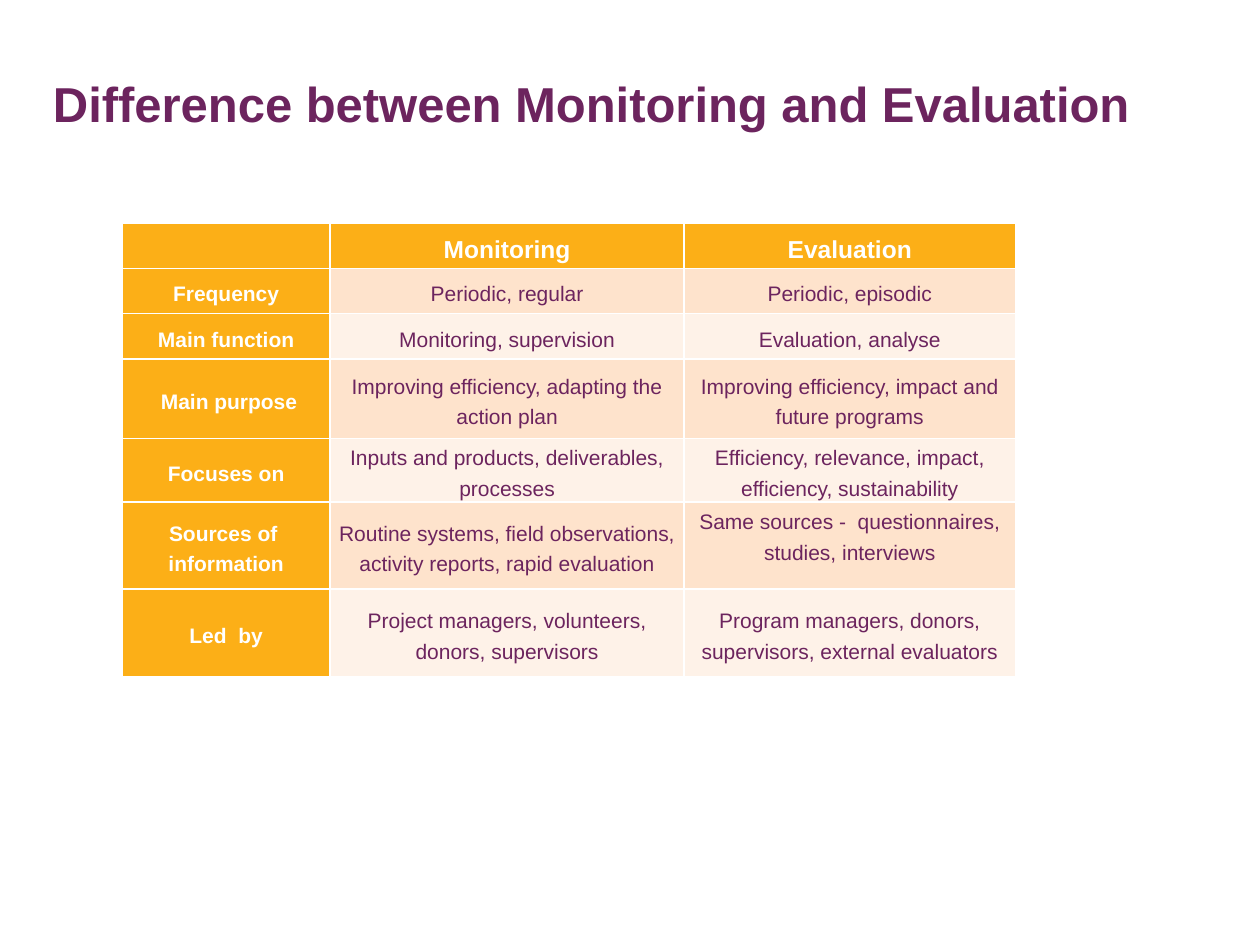
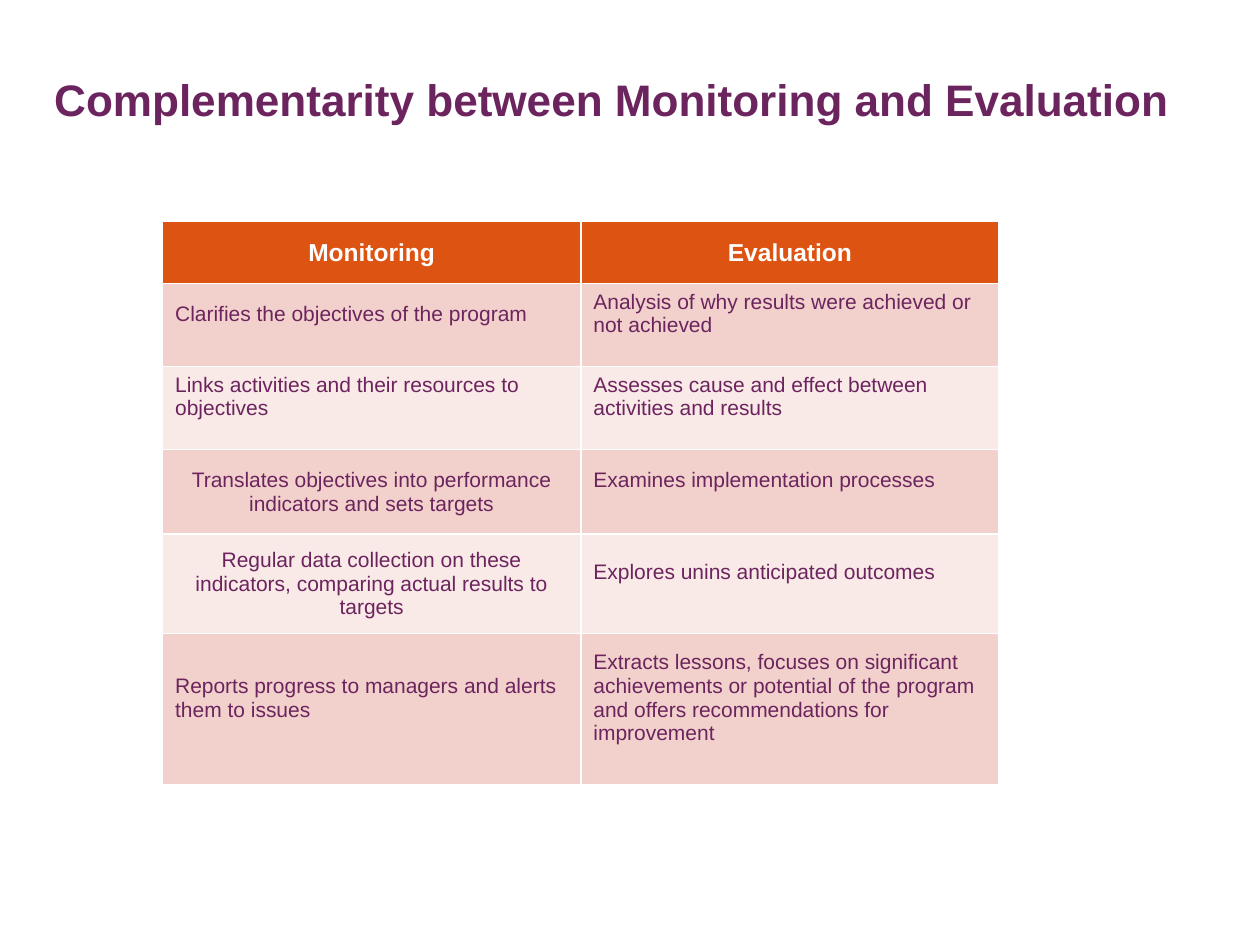
from pptx import Presentation
from pptx.dml.color import RGBColor
from pptx.enum.text import MSO_ANCHOR, MSO_AUTO_SIZE, PP_ALIGN
from pptx.util import Inches, Pt

COLORS = {
    "plum": "6C245E",
    "white": "FFFFFF",
    "amber": "FCAF17",
    "peach": "FEE3CC",
    "cream": "FEF2E8",
    "rust": "DD5412",
    "rose": "F2D1CC",
    "blush": "F9E9E7",
}
FONT = "Arial"

DIFFERENCES = [
    ["", "Monitoring", "Evaluation"],
    ["Frequency", "Periodic, regular", "Periodic, episodic"],
    ["Main function", "Monitoring, supervision", "Evaluation, analyse"],
    [" Main purpose", "Improving efficiency, adapting the action plan",
     "Improving efficiency, impact and future programs"],
    ["Focuses on", "Inputs and products, deliverables, processes",
     "Efficiency, relevance, impact, efficiency, sustainability"],
    ["Sources of \vinformation",
     "Routine systems, field observations, activity reports, rapid evaluation",
     "Same sources -  questionnaires, studies, interviews"],
    ["Led  by", "Project managers, volunteers, donors, supervisors",
     "Program managers, donors, supervisors, external evaluators"],
]

COMPLEMENTS = [
    ["Monitoring", "Evaluation"],
    ["Clarifies the objectives of the program",
     "Analysis of why results were achieved or not achieved"],
    ["Links activities and their resources to objectives",
     "Assesses cause and effect between activities and results"],
    ["Translates objectives into performance indicators and sets targets",
     "Examines implementation processes"],
    ["Regular data collection on these indicators, comparing actual results to targets",
     "Explores unins anticipated outcomes"],
    ["Reports progress to managers and alerts them to issues",
     "Extracts lessons, focuses on significant achievements or potential of the "
     "program and offers recommendations for improvement"],
]


def apply(target, values):
    for name, value in values.items():
        setattr(target, name, value)


class Deck:
    def __init__(self):
        self.presentation = Presentation()
        self.presentation.slide_width = Inches(10)
        self.presentation.slide_height = Inches(7.5)
        self.slide = None

    def style_run(self, run, size, color, bold):
        apply(run.font, {"name": FONT, "size": Pt(size), "bold": bold})
        run.font.color.rgb = RGBColor.from_string(COLORS[color])

    def title_slide(self, text, left, top, width, size):
        """Start a slide with its heading."""
        layout = self.presentation.slide_layouts[5]
        self.slide = self.presentation.slides.add_slide(layout)
        heading = self.slide.shapes.title
        apply(heading, {"left": Inches(left), "top": Inches(top),
                        "width": Inches(width), "height": Inches(0.7)})
        apply(heading.text_frame, {"text": text, "word_wrap": True,
                                   "auto_size": MSO_AUTO_SIZE.NONE,
                                   "vertical_anchor": MSO_ANCHOR.MIDDLE})
        line = heading.text_frame.paragraphs[0]
        apply(line, {"alignment": PP_ALIGN.LEFT, "line_spacing": 0.9})
        self.style_run(line.runs[0], size, "plum", True)

    def table(self, rows, left, top, widths, heights, header, bands, margins,
              paragraph_format, raised, raised_format, label_column=False):
        """Draw a banded table; raised cells have extra room below their text."""
        frame = self.slide.shapes.add_table(
            len(rows), len(widths), Inches(left), Inches(top),
            Inches(sum(widths)), Inches(sum(heights)))
        grid = frame.table
        grid.first_col = label_column
        for column, width in zip(grid.columns, widths):
            column.width = Inches(width)
        for row, height in zip(grid.rows, heights):
            row.height = Inches(height)
        side, edge = margins
        for r, texts in enumerate(rows):
            for c, text in enumerate(texts):
                is_header = r == 0 or (label_column and c == 0)
                is_raised = (r, c) in raised
                cell = grid.cell(r, c)
                below = edge + (0.18 if is_raised else 0)
                apply(cell, {"text": text, "vertical_anchor": MSO_ANCHOR.MIDDLE,
                             "margin_left": Inches(side), "margin_right": Inches(side),
                             "margin_top": Inches(edge), "margin_bottom": Inches(below)})
                cell.fill.solid()
                fill = header if is_header else bands[(r - 1) % 2]
                cell.fill.fore_color.rgb = RGBColor.from_string(COLORS[fill])
                line = cell.text_frame.paragraphs[0]
                apply(line, paragraph_format)
                if is_raised:
                    apply(line, raised_format)
                for run in line.runs:
                    self.style_run(run, 14 if r == 0 else 12,
                                   "white" if is_header else "plum", is_header)


def main():
    deck = Deck()
    centred = {"alignment": PP_ALIGN.CENTER}

    deck.title_slide("Difference between Monitoring and Evaluation", 0.32, 0.5, 9.36, 28)
    deck.table(DIFFERENCES, 0.97, 1.77, [1.65, 2.81, 2.63],
               [0.36, 0.36, 0.36, 0.63, 0.5, 0.69, 0.7],
               "amber", ["peach", "cream"], (0.01, 0.01),
               {**centred, "line_spacing": 1.3, "space_after": Pt(12)},
               raised={(5, 2)}, raised_format=centred, label_column=True)

    deck.title_slide("Complementarity between Monitoring and Evaluation",
                     0.33, 0.46, 9.54, 25.2)
    deck.table(COMPLEMENTS, 1.29, 1.76, [3.32, 3.32],
               [0.49, 0.66, 0.66, 0.67, 0.79, 1.2],
               "rust", ["rose", "blush"], (0.1, 0.05), centred,
               raised={(1, 0), (2, 0), (5, 0)} | {(r, 1) for r in range(1, 6)},
               raised_format={"alignment": PP_ALIGN.LEFT})

    deck.presentation.save("out.pptx")


if __name__ == "__main__":
    main()
